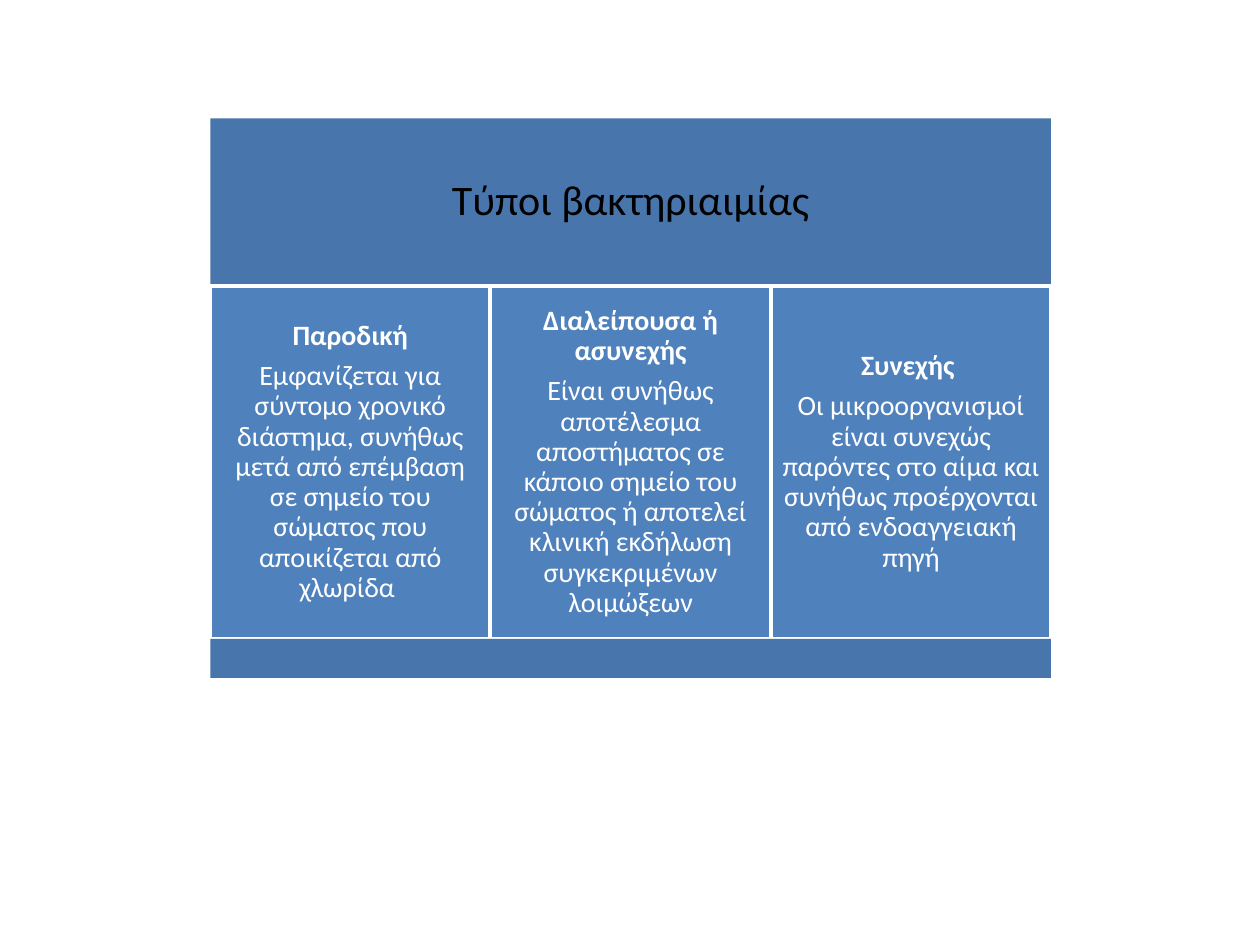
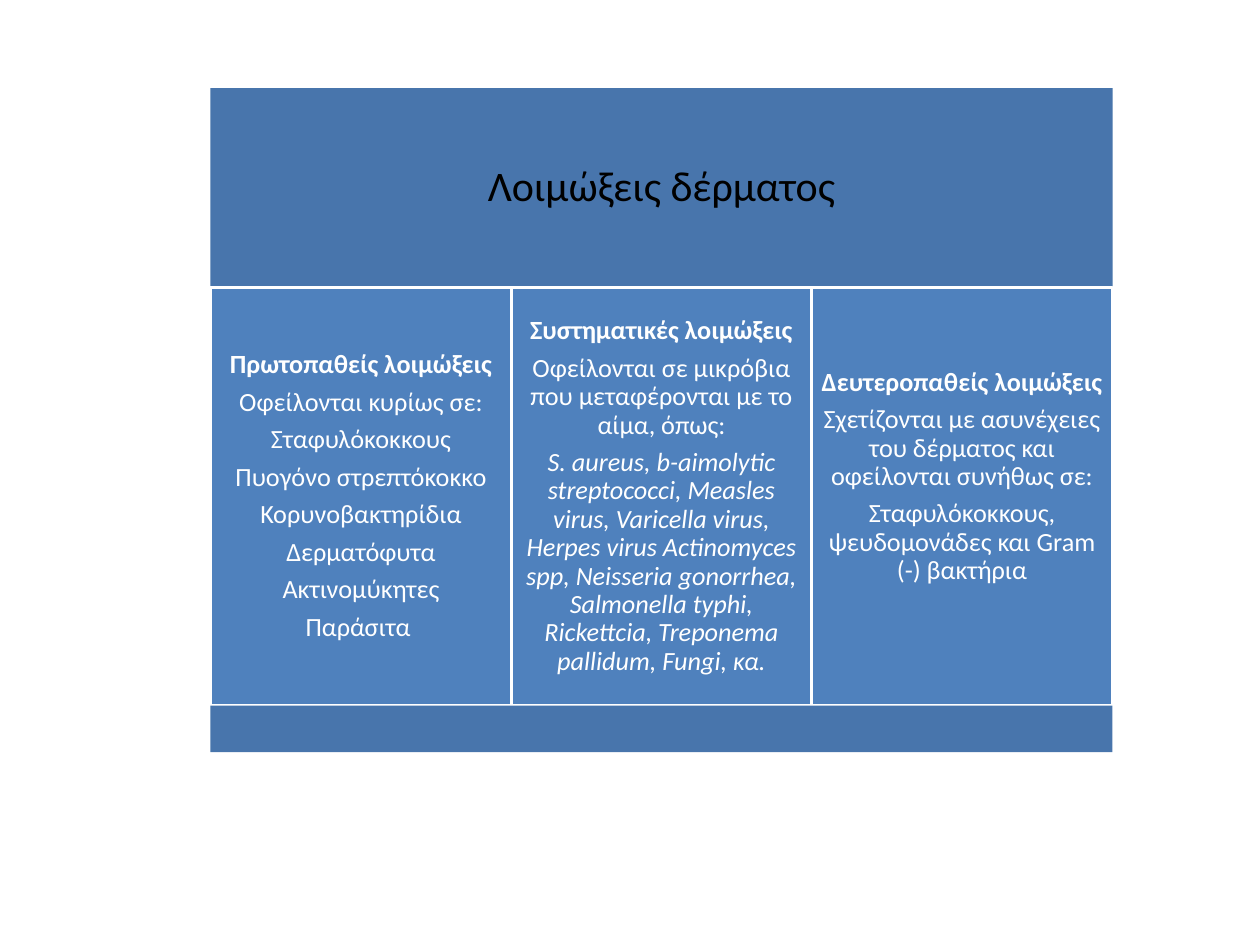
from dataclasses import dataclass

from pptx import Presentation
from pptx.dml.color import RGBColor
from pptx.enum.shapes import MSO_SHAPE
from pptx.enum.text import MSO_ANCHOR, MSO_AUTO_SIZE, PP_ALIGN
from pptx.util import Emu, Pt

EMU_PER_PX = 9144  # 100 px to the inch
TITLE_ONLY = 5


@dataclass(frozen=True)
class Theme:
    font: str = "Calibri"
    band: RGBColor = RGBColor(0x48, 0x75, 0xAC)
    column: RGBColor = RGBColor(0x4F, 0x81, 0xBD)
    title_text: RGBColor = RGBColor(0, 0, 0)
    column_text: RGBColor = RGBColor(255, 255, 255)
    gap: RGBColor = RGBColor(255, 255, 255)
    gap_width: int = 2
    title_size: int = 24
    title_inset: int = 10
    line_spacing: float = 0.9
    space_after: float = 0.35  # share of the type size


@dataclass(frozen=True)
class Para:
    text: str
    bold: bool = False
    italic: bool = False


@dataclass(frozen=True)
class Column:
    paragraphs: tuple[Para, ...]
    lift: int = 0  # extra bottom inset, raises the centred text


@dataclass(frozen=True)
class Panel:
    title: str
    top: int
    width: int
    title_height: int
    column_height: int
    foot_height: int
    text_size: int
    inset: int
    columns: tuple[Column, ...]
    left: int = 167


THEME = Theme()

PANELS = (
    Panel("Τύποι βακτηριαιμίας", 94, 667, 133, 280, 31, 16, 7, (
        Column((
            Para("Παροδική", bold=True),
            Para("Εμφανίζεται για σύντομο χρονικό διάστημα, συνήθως μετά από "
                 "επέμβαση σε σημείο του σώματος που αποικίζεται από χλωρίδα "),
        )),
        Column((
            Para("Διαλείπουσα ή ασυνεχής", bold=True),
            Para("Είναι συνήθως αποτέλεσμα αποστήματος σε κάποιο σημείο του "
                 "σώματος ή αποτελεί κλινική εκδήλωση συγκεκριμένων λοιμώξεων"),
        )),
        Column((
            Para("Συνεχής ", bold=True),
            Para("Οι μικροοργανισμοί είναι συνεχώς παρόντες στο αίμα και "
                 "συνήθως προέρχονται από ενδοαγγειακή πηγή"),
        )),
    )),
    Panel("Λοιμώξεις δέρματος", 70, 716, 158, 332, 37, 15, 6, (
        Column((
            Para("Πρωτοπαθείς λοιμώξεις", bold=True),
            Para("Οφείλονται κυρίως σε:"),
            Para("Σταφυλόκοκκους"),
            Para("Πυογόνο στρεπτόκοκκο"),
            Para("Κορυνοβακτηρίδια"),
            Para("Δερματόφυτα"),
            Para("Ακτινομύκητες"),
            Para("Παράσιτα "),
        )),
        Column((
            Para("Συστηματικές λοιμώξεις", bold=True),
            Para("Οφείλονται σε μικρόβια που μεταφέρονται με το αίμα, όπως:"),
            Para("S. aureus, b-aimolytic streptococci, Measles virus, "
                 "Varicella virus, Herpes virus Actinomyces spp, Neisseria "
                 "gonorrhea, Salmonella typhi, Rickettcia, Treponema "
                 "pallidum, Fungi, κα.", italic=True),
        )),
        Column((
            Para("Δευτεροπαθείς λοιμώξεις", bold=True),
            Para("Σχετίζονται με ασυνέχειες του δέρματος και οφείλονται "
                 "συνήθως σε:"),
            Para("Σταφυλόκοκκους, ψευδομονάδες και Gram (-) βακτήρια"),
        ), lift=31),
    )),
)


def px(length: int) -> Emu:
    return Emu(length * EMU_PER_PX)


def paint(sp, color: RGBColor) -> None:
    sp.fill.solid()
    sp.fill.fore_color.rgb = color


def write(sp, paragraphs: tuple[Para, ...], size: int, color: RGBColor,
          inset: int, lift: int = 0) -> None:
    """Fill a shape with centred paragraphs in the shared text style."""
    tf = sp.text_frame
    tf.word_wrap = True
    tf.auto_size = MSO_AUTO_SIZE.NONE
    tf.vertical_anchor = MSO_ANCHOR.MIDDLE
    tf.margin_left = tf.margin_right = tf.margin_top = px(inset)
    tf.margin_bottom = px(inset + lift)
    for i, para in enumerate(paragraphs):
        p = tf.paragraphs[0] if i == 0 else tf.add_paragraph()
        p.text = para.text
        p.alignment = PP_ALIGN.CENTER
        p.line_spacing = THEME.line_spacing
        p.space_after = Pt(size * THEME.space_after)
        for r in p.runs:
            r.font.name = THEME.font
            r.font.size = Pt(size)
            r.font.bold = para.bold
            r.font.italic = para.italic
            r.font.color.rgb = color


def add_box(slide, left: int, top: int, width: int, height: int,
            color: RGBColor):
    sp = slide.shapes.add_shape(MSO_SHAPE.RECTANGLE, px(left), px(top),
                                px(width), px(height))
    sp.shadow.inherit = False
    sp.line.fill.background()
    paint(sp, color)
    return sp


def add_panel(prs, panel: Panel) -> None:
    slide = prs.slides.add_slide(prs.slide_layouts[TITLE_ONLY])

    # Title band
    title = slide.shapes.title
    title.left, title.top = px(panel.left), px(panel.top)
    title.width, title.height = px(panel.width), px(panel.title_height)
    paint(title, THEME.band)
    write(title, (Para(panel.title),), THEME.title_size, THEME.title_text,
          THEME.title_inset)

    # Equal columns
    top = panel.top + panel.title_height
    count = len(panel.columns)
    edges = [panel.left + round(panel.width * i / count)
             for i in range(count + 1)]
    for column, left, right in zip(panel.columns, edges, edges[1:]):
        sp = add_box(slide, left, top, right - left, panel.column_height,
                     THEME.column)
        sp.line.color.rgb = THEME.gap
        sp.line.width = Pt(THEME.gap_width)
        write(sp, column.paragraphs, panel.text_size, THEME.column_text,
              panel.inset, column.lift)

    # Foot band
    add_box(slide, panel.left, top + panel.column_height, panel.width,
            panel.foot_height, THEME.band)


def main() -> None:
    prs = Presentation()
    prs.slide_width, prs.slide_height = px(1000), px(750)
    for panel in PANELS:
        add_panel(prs, panel)
    prs.save("out.pptx")


if __name__ == "__main__":
    main()
